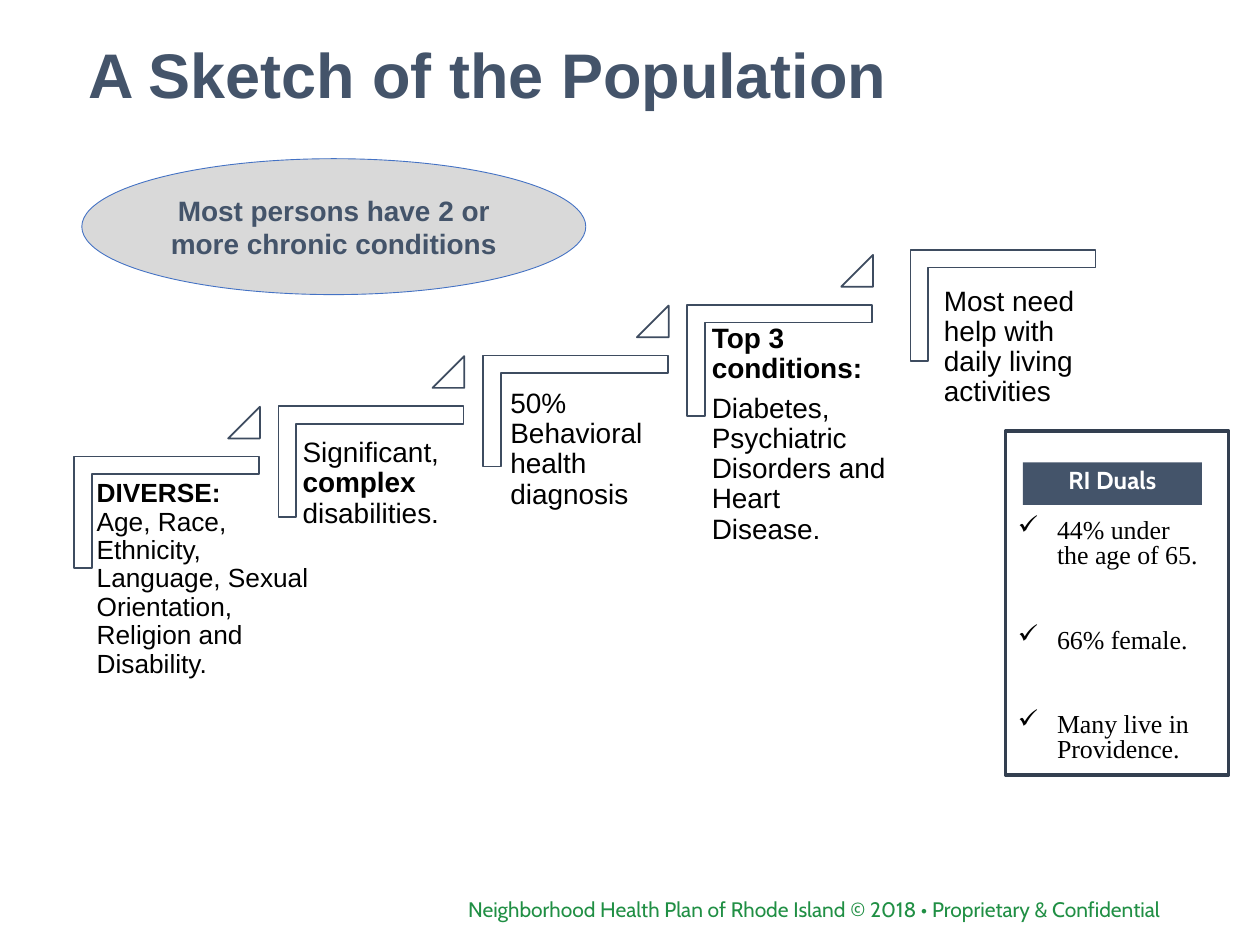
from dataclasses import dataclass

from lxml.etree import SubElement
from pptx import Presentation
from pptx.dml.color import RGBColor
from pptx.enum.shapes import MSO_SHAPE
from pptx.enum.text import MSO_ANCHOR, PP_ALIGN
from pptx.oxml.ns import qn
from pptx.util import Cm, Pt


@dataclass(frozen=True)
class Theme:
    slate: RGBColor = RGBColor(0x44, 0x54, 0x6A)
    step_line: RGBColor = RGBColor(0x3E, 0x4C, 0x60)
    frame_line: RGBColor = RGBColor(0x33, 0x3F, 0x50)
    oval_line: RGBColor = RGBColor(0x44, 0x72, 0xC4)
    oval_fill: RGBColor = RGBColor(0xD9, 0xD9, 0xD9)
    green: RGBColor = RGBColor(0x20, 0x8F, 0x44)
    white: RGBColor = RGBColor(0xFF, 0xFF, 0xFF)
    black: RGBColor = RGBColor(0, 0, 0)
    title_size: float = 36
    step_size: float = 16
    diverse_size: float = 15
    duals_size: float = 14.8
    heading_size: float = 14
    footer_size: float = 12


theme = Theme()
deck = Presentation()
deck.slide_width, deck.slide_height = Cm(25.4), Cm(19.05)
page = deck.slides.add_slide(deck.slide_layouts[6])


def draw(kind, left, top, width, height, fill=None, line=None, weight=1):
    shape = page.shapes.add_shape(kind, Cm(left), Cm(top), Cm(width), Cm(height))
    shape.shadow.inherit = False
    if fill is None:
        shape.fill.background()
    else:
        shape.fill.solid()
        shape.fill.fore_color.rgb = fill
    if line is None:
        shape.line.fill.background()
    else:
        shape.line.color.rgb = line
        shape.line.width = Pt(weight)
    return shape


def write(box, paragraphs, size, color=theme.black, font="Arial", align=PP_ALIGN.LEFT,
          anchor=MSO_ANCHOR.TOP, spacing=0.9, before=0, after=0, inset=None):
    frame = box.text_frame
    frame.word_wrap = True
    frame.vertical_anchor = anchor
    if inset is not None:
        frame.margin_left = frame.margin_right = Cm(inset)
        frame.margin_top = frame.margin_bottom = Cm(inset)
    for index, spans in enumerate(paragraphs):
        para = frame.add_paragraph() if index else frame.paragraphs[0]
        para.alignment = align
        para.line_spacing = spacing
        para.space_before = Pt(before if index else 0)
        para.space_after = Pt(after)
        for text, bold in spans:
            if text == "\n":
                para.add_line_break()
                continue
            span = para.add_run()
            span.text = text
            span.font.name = font
            span.font.size = Pt(size)
            span.font.bold = bold
            span.font.color.rgb = color


heading = draw(MSO_SHAPE.RECTANGLE, 20.62, 9.32, 3.61, 0.86, theme.slate)
write(heading, [[("RI Duals", True)]], theme.heading_size, theme.white, "Cabin",
      PP_ALIGN.CENTER)

title = page.shapes.add_textbox(Cm(0.84), Cm(0.76), Cm(17.98), Cm(2.08))
write(title, [[("A Sketch of the Population", True)]], theme.title_size, theme.slate,
      align=PP_ALIGN.CENTER)

duals = page.shapes.add_textbox(Cm(20.27), Cm(10.36), Cm(4.17), Cm(5.26))
facts = ["44% under the age of 65.", "66% female.", "Many live in Providence."]
write(duals, [[(fact, False)] for fact in facts], theme.duals_size,
      font="Times New Roman", spacing=0.8, before=34)
for para in duals.text_frame.paragraphs:
    properties = para._p.get_or_add_pPr()
    properties.set("marL", str(Cm(0.79)))
    properties.set("indent", str(Cm(-0.79)))
    SubElement(properties, qn("a:buChar")).set("char", "✓")

diverse = [[("DIVERSE:", True), ("\n", False),
            ("Age, Race, Ethnicity, Language, Sexual Orientation, Religion and Disability.",
             False)]]
complex_needs = [[("Significant, ", False), ("complex", True), (" disabilities.", False)]]
behavioral = [[("50% Behavioral health diagnosis", False)]]
conditions = [[("Top 3 conditions:", True)],
              [("Diabetes, Psychiatric Disorders and Heart Disease.", False)]]
daily_living = [[("Most need help with daily living activities", False)]]

steps = [
    (1.8, 9.53, 4.88, theme.diverse_size, 0.15, diverse),
    (5.92, 8.66, 3.38, theme.step_size, 0.18, complex_needs),
    (10.11, 7.67, 3.38, theme.step_size, 0.18, behavioral),
    (14.17, 6.35, 3.99, theme.step_size, 0.18, conditions),
    (18.85, 5.61, 3.38, theme.step_size, 0.18, daily_living),
]
last = len(steps) - 1
for index, (left, top, width, size, inset, paragraphs) in enumerate(steps):
    corner_left = 2.24 + 4.12 * index if index < last else 19.1
    corner_top = 8.46 - 1.02 * index if index < last else 4.29
    corner = draw(MSO_SHAPE.CORNER, corner_left, corner_top, 2.24, 3.73,
                  theme.white, theme.step_line)
    corner.rotation = 90
    corner.adjustments[0] = corner.adjustments[1] = 0.16
    if index < last:
        triangle = draw(MSO_SHAPE.ISOSCELES_TRIANGLE, corner_left + 2.36, corner_top - 0.26,
                        0.64, 0.64, theme.white, theme.step_line)
        triangle.adjustments[0] = 1
    label = page.shapes.add_textbox(Cm(left), Cm(top), Cm(width), Cm(2.95))
    write(label, paragraphs, size, after=5.6, inset=inset)

oval = draw(MSO_SHAPE.OVAL, 1.65, 3.2, 10.16, 2.74, theme.oval_fill, theme.oval_line, 0.5)
write(oval, [[("Most persons have 2 or more chronic conditions", True)]], theme.step_size,
      theme.slate, align=PP_ALIGN.CENTER, anchor=MSO_ANCHOR.MIDDLE, spacing=1.0)

draw(MSO_SHAPE.RECTANGLE, 20.27, 8.69, 4.5, 6.93, line=theme.frame_line, weight=2)

footer = page.shapes.add_textbox(Cm(8.41), Cm(17.98), Cm(15.24), Cm(0.69))
write(footer,
      [[("Neighborhood Health Plan of Rhode Island © 2018 • Proprietary & Confidential", False)]],
      theme.footer_size, theme.green, "Cabin", PP_ALIGN.RIGHT, MSO_ANCHOR.MIDDLE, 1.0)

deck.save("out.pptx")
